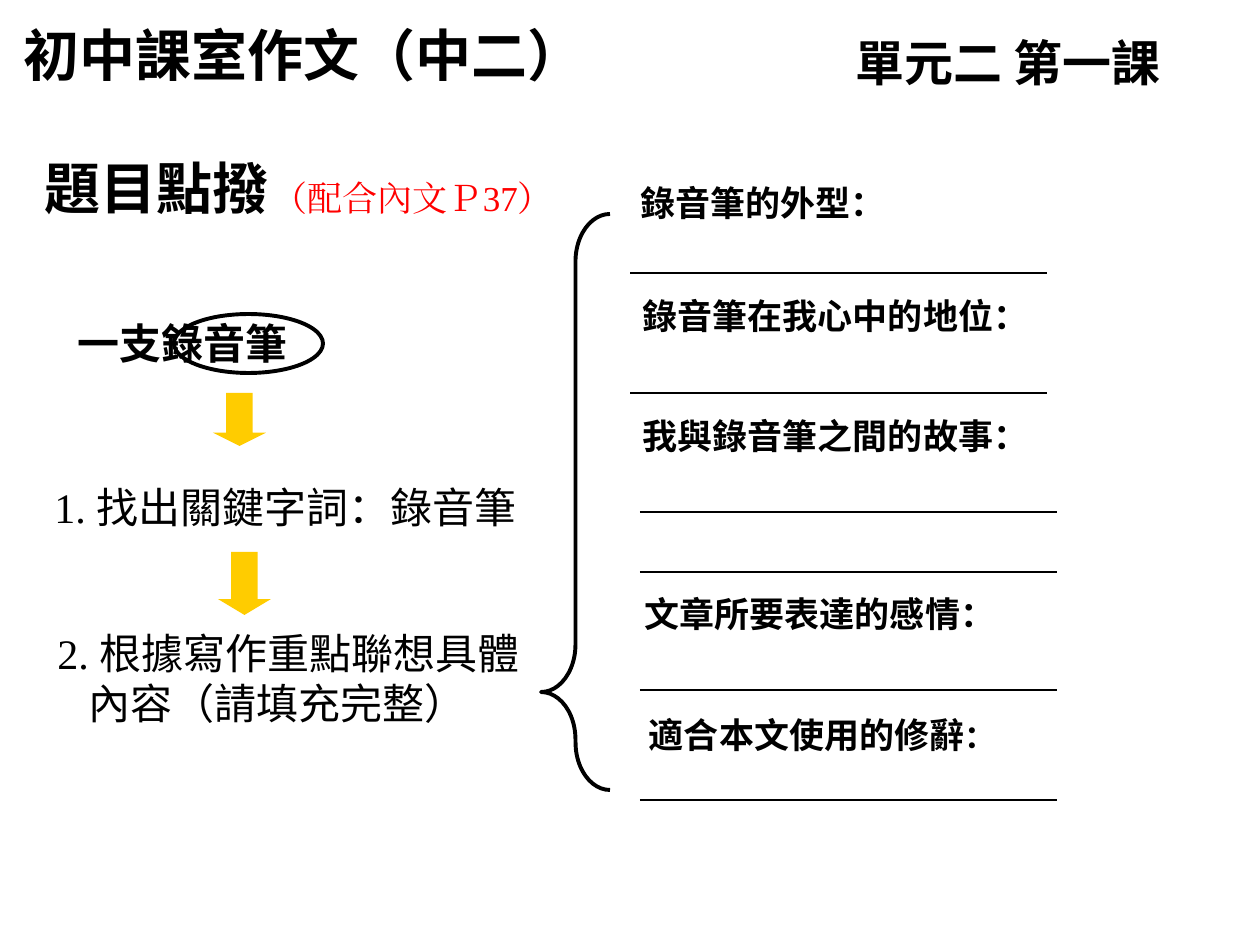
from lxml.etree import SubElement
from pptx import Presentation
from pptx.dml.color import RGBColor
from pptx.enum.shapes import MSO_CONNECTOR, MSO_SHAPE
from pptx.enum.text import MSO_ANCHOR, MSO_AUTO_SIZE, PP_ALIGN
from pptx.oxml.ns import qn
from pptx.util import Emu, Pt

PX = 914400 / 126
BLACK, RED, GOLD = "000000", "FF0000", "FFCC00"


def px(*lengths):
    """Turn pixel lengths into a list of EMU lengths."""
    return [Emu(round(length * PX)) for length in lengths]


def write(shape, lines, size, bold=False, color=BLACK, align=PP_ALIGN.LEFT, wrap=True):
    """Fill a shape; each line is a list of (text, font name) runs."""
    frame = shape.text_frame
    frame.word_wrap = wrap
    frame.auto_size = MSO_AUTO_SIZE.NONE
    frame.vertical_anchor = MSO_ANCHOR.TOP
    for index, line in enumerate(lines):
        paragraph = frame.add_paragraph() if index else frame.paragraphs[0]
        paragraph.alignment = align
        for text, name in line:
            run = paragraph.add_run()
            run.text = text
            run.font.size = Pt(size)
            run.font.bold = bold
            run.font.color.rgb = RGBColor.from_string(color)
            run.font.name = name
            SubElement(run.font._element, qn("a:ea"), typeface=name)
    return frame


presentation = Presentation()
presentation.slide_width, presentation.slide_height = px(1260, 945)
slide = presentation.slides.add_slide(presentation.slide_layouts[5])
shapes = slide.shapes

# Headings
title = shapes.title
title.left, title.top, title.width, title.height = px(11, 14, 658, 80)
write(title, [[("初中課室作文（中二）", "Lato")]], 32, bold=True)

headings = [
    ((843, 26, 417, 72), "單元二 第一課", "Lato", 28, True, BLACK),
    ((32, 147, 388, 80), "題目點撥", "Arial", 32, True, BLACK),
    ((260, 170, 311, 54), "（配合內文Ｐ37）", "Times New Roman", 20, False, RED),
]
for box, text, name, size, bold, color in headings:
    write(shapes.add_textbox(*px(*box)), [[(text, name)]], size, bold, color)

# Essay topic and the two steps
topic = write(shapes.add_textbox(*px(65, 296, 602, 137)),
              [[("一支錄音筆", "DejaVu Sans")]], 24, bold=True)
topic.paragraphs[0].line_spacing = 1.3

write(shapes.add_textbox(*px(42, 475, 625, 63)),
      [[("1. ", "Times New Roman"), ("找出關鍵字詞：錄音筆", "DejaVu Sans")]], 24)
step_two = write(shapes.add_textbox(*px(45, 621, 525, 113)),
                 [[("2. ", "Times New Roman"), ("根據寫作重點聯想具體", "DejaVu Sans")],
                  [("內容（請填充完整）", "DejaVu Sans")]], 24)
indent, = px(31)
step_two.paragraphs[1]._p.get_or_add_pPr().set("marL", str(indent))

# Arrows between the steps
for box, head in [((213, 393, 53, 53), 0.25), ((218, 552, 53, 63), 0.3)]:
    arrow = shapes.add_shape(MSO_SHAPE.DOWN_ARROW, *px(*box))
    arrow.adjustments[1] = head
    arrow.shadow.inherit = False
    arrow.fill.solid()
    arrow.fill.fore_color.rgb = RGBColor.from_string(GOLD)
    arrow.line.fill.background()

# Ring around the key word, brace before the prompts
ring = shapes.add_shape(MSO_SHAPE.OVAL, *px(174, 314, 149, 59))
brace = shapes.add_shape(MSO_SHAPE.LEFT_BRACE, *px(541, 214, 69, 576))
brace.adjustments[0] = 0.69
brace.adjustments[1] = 0.83
for outline in (ring, brace):
    outline.shadow.inherit = False
    outline.fill.background()
    outline.line.color.rgb = RGBColor.from_string(BLACK)
    outline.line.width = Pt(2.25)

# Prompts
prompts = [
    ((628, 175, 596, 54), "錄音筆的外型：", "DejaVu Sans", PP_ALIGN.LEFT, True),
    ((630, 288, 411, 54), "錄音筆在我心中的地位：", "Arial", PP_ALIGN.CENTER, False),
    ((630, 408, 411, 54), "我與錄音筆之間的故事：", "Arial", PP_ALIGN.CENTER, False),
    ((632, 586, 376, 54), "文章所要表達的感情：", "Arial", PP_ALIGN.CENTER, False),
]
for box, text, name, align, wrap in prompts:
    write(shapes.add_textbox(*px(*box)), [[(text, name)]], 20, True, BLACK, align, wrap)
rhetoric = write(shapes.add_textbox(*px(600, 707, 445, 54)),
                 [[("適合本文使用的修辭", "Arial"), ("：", "Arial")]],
                 20, True, BLACK, PP_ALIGN.CENTER)
rhetoric.paragraphs[0].runs[1].font.size = Pt(18)

# Answer lines
for left, y in [(630, 273), (630, 393), (640, 512), (640, 572), (640, 690), (640, 800)]:
    answer = shapes.add_connector(MSO_CONNECTOR.STRAIGHT, *px(left, y, left + 417, y))
    answer.line.color.rgb = RGBColor.from_string(BLACK)
    answer.line.width = Pt(1)
    SubElement(answer._element.spPr, qn("a:effectLst"))

presentation.save("out.pptx")
